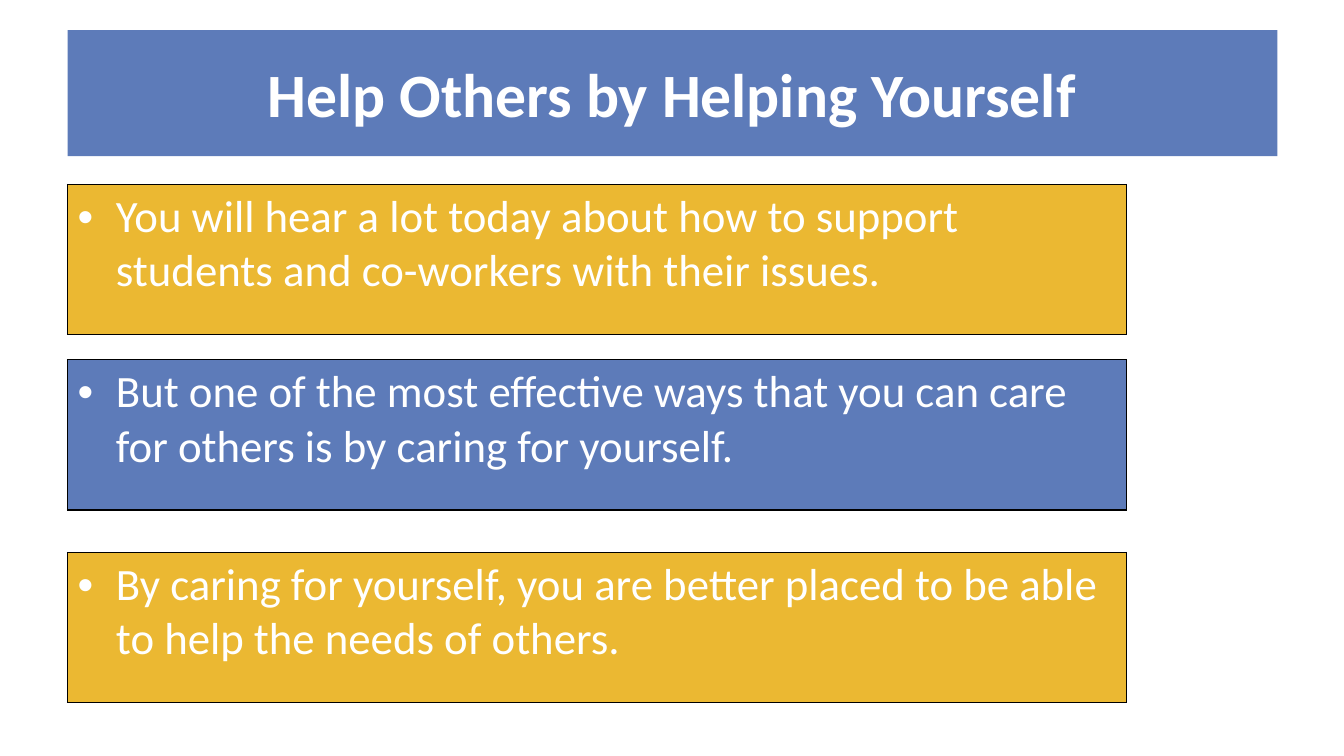
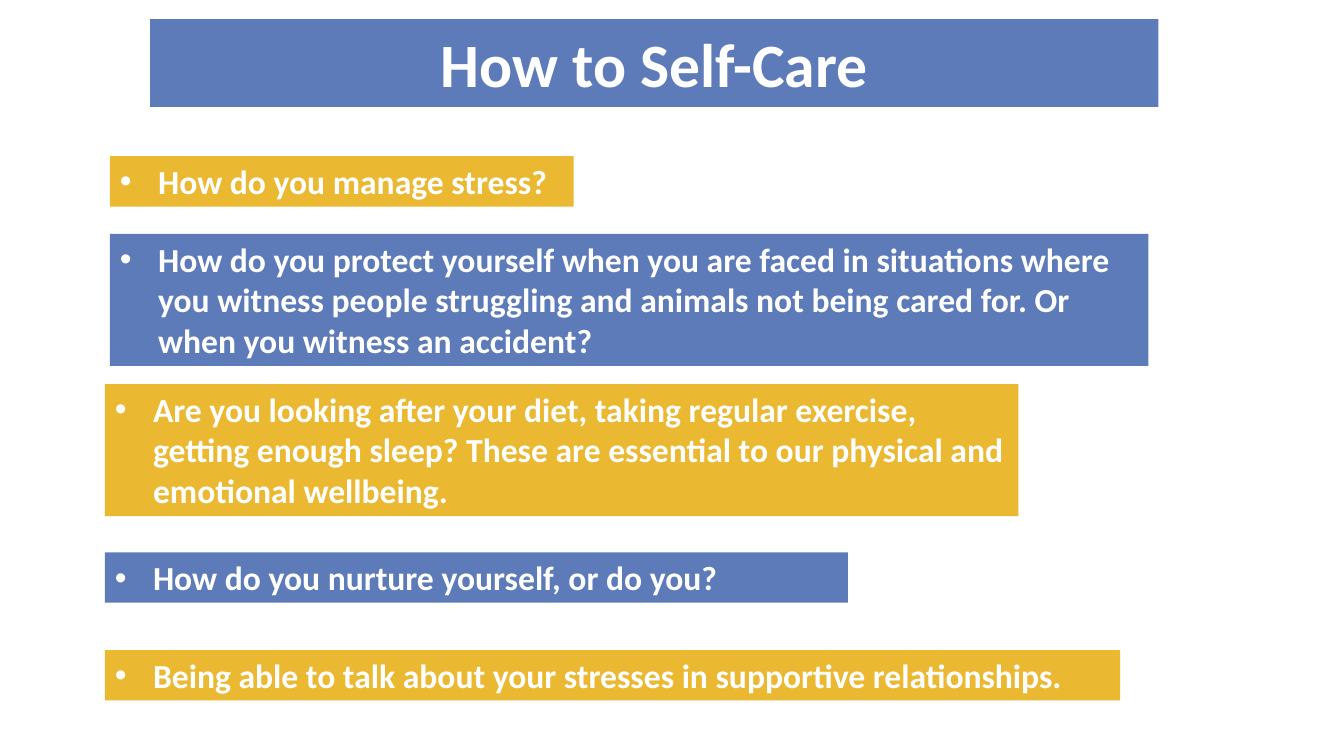
from lxml import etree
from pptx import Presentation
from pptx.dml.color import RGBColor
from pptx.enum.shapes import MSO_SHAPE
from pptx.enum.text import MSO_ANCHOR, PP_ALIGN
from pptx.oxml import parse_xml
from pptx.oxml.ns import nsdecls, qn
from pptx.util import Inches, Pt

FONT = "Calibri"
WHITE, BLACK, BLUE, GOLD = "FFFFFF", "000000", "5D7BB9", "EBB832"
BULLET_INDENT = 0.38

STATEMENTS = [
    (1.83, GOLD, "You will hear a lot today about how to support students and "
                 "co-workers with their issues."),
    (3.57, BLUE, "But one of the most effective ways that you can care for others "
                 "is by caring for yourself."),
    (5.48, GOLD, "By caring for yourself, you are better placed to be able to help "
                 "the needs of others."),
]

QUESTIONS = [
    (1.09, 1.55, 4.6, 0.5, GOLD, "How do you manage stress?"),
    (1.09, 2.32, 10.3, 1.31, BLUE,
     "How do you protect yourself when you are faced in situations where you witness "
     "people struggling and animals not being cared for. Or when you witness an accident?"),
    (1.04, 3.81, 9.06, 1.31, GOLD,
     "Are you looking after your diet, taking regular exercise, getting enough sleep? "
     "These are essential to our physical and emotional wellbeing."),
    (1.04, 5.48, 7.37, 0.5, BLUE, "How do you nurture yourself, or do you?"),
    (1.04, 6.45, 10.07, 0.5, GOLD,
     "Being able to talk about your stresses in supportive relationships."),
]


def fill_with(target, color):
    target.fill.solid()
    target.fill.fore_color.rgb = RGBColor.from_string(color)


def add_bullet(paragraph):
    properties = paragraph._p.get_or_add_pPr()
    indent = Inches(BULLET_INDENT)
    properties.set("marL", str(indent))
    properties.set("indent", str(-indent))
    etree.SubElement(properties, qn("a:buFont"), typeface="Arial")
    etree.SubElement(properties, qn("a:buChar"), char="•")


def write_text(frame, text, *, size, bold=False, align=PP_ALIGN.LEFT,
               anchor=MSO_ANCHOR.TOP, bullet=False):
    frame.word_wrap = True
    frame.vertical_anchor = anchor
    paragraph = frame.paragraphs[0]
    paragraph.alignment = align
    if bullet:
        add_bullet(paragraph)
    run = paragraph.add_run()
    run.text = text
    run.font.name = FONT
    run.font.size = Pt(size)
    run.font.bold = bold
    run.font.color.rgb = RGBColor.from_string(WHITE)


def add_band(slide, left, top, width, height, color, text, **text_format):
    """Add a borderless filled rectangle holding one paragraph."""
    band = slide.shapes.add_shape(MSO_SHAPE.RECTANGLE, Inches(left), Inches(top),
                                  Inches(width), Inches(height))
    band.shadow.inherit = False
    band.line.fill.background()
    fill_with(band, color)
    write_text(band.text_frame, text, **text_format)


def add_title(slide, left, top, width, height, text):
    add_band(slide, left, top, width, height, BLUE, text, size=44, bold=True,
             align=PP_ALIGN.CENTER, anchor=MSO_ANCHOR.MIDDLE)


def outline_cell(cell, color, points):
    properties = cell._tc.get_or_add_tcPr()
    for position, side in enumerate(("lnL", "lnR", "lnT", "lnB")):
        border = parse_xml(
            f'<a:{side} {nsdecls("a")} w="{Pt(points)}"><a:solidFill>'
            f'<a:srgbClr val="{color}"/></a:solidFill></a:{side}>')
        properties.insert(position, border)


def add_statement(slide, top, color, text):
    """Add a one-cell table with a thin outline and a bulleted sentence."""
    width, height = Inches(10.5), Inches(1.49)
    frame = slide.shapes.add_table(1, 1, Inches(0.67), Inches(top), width, height)
    cell = frame.table.cell(0, 0)
    fill_with(cell, color)
    outline_cell(cell, BLACK, 1)
    write_text(cell.text_frame, text, size=32, bullet=True)


def build_help_slide(slide):
    add_title(slide, 0.67, 0.3, 12, 1.25, "Help Others by Helping Yourself")
    for statement in STATEMENTS:
        add_statement(slide, *statement)


def build_self_care_slide(slide):
    add_title(slide, 1.49, 0.19, 10, 0.87, "How to Self-Care")
    for question in QUESTIONS:
        add_band(slide, *question, size=24, bold=True, bullet=True)


def main():
    presentation = Presentation()
    presentation.slide_width = Inches(13.33)
    presentation.slide_height = Inches(7.5)
    blank = presentation.slide_layouts[6]
    for build in (build_help_slide, build_self_care_slide):
        build(presentation.slides.add_slide(blank))
    presentation.save("out.pptx")


if __name__ == "__main__":
    main()
